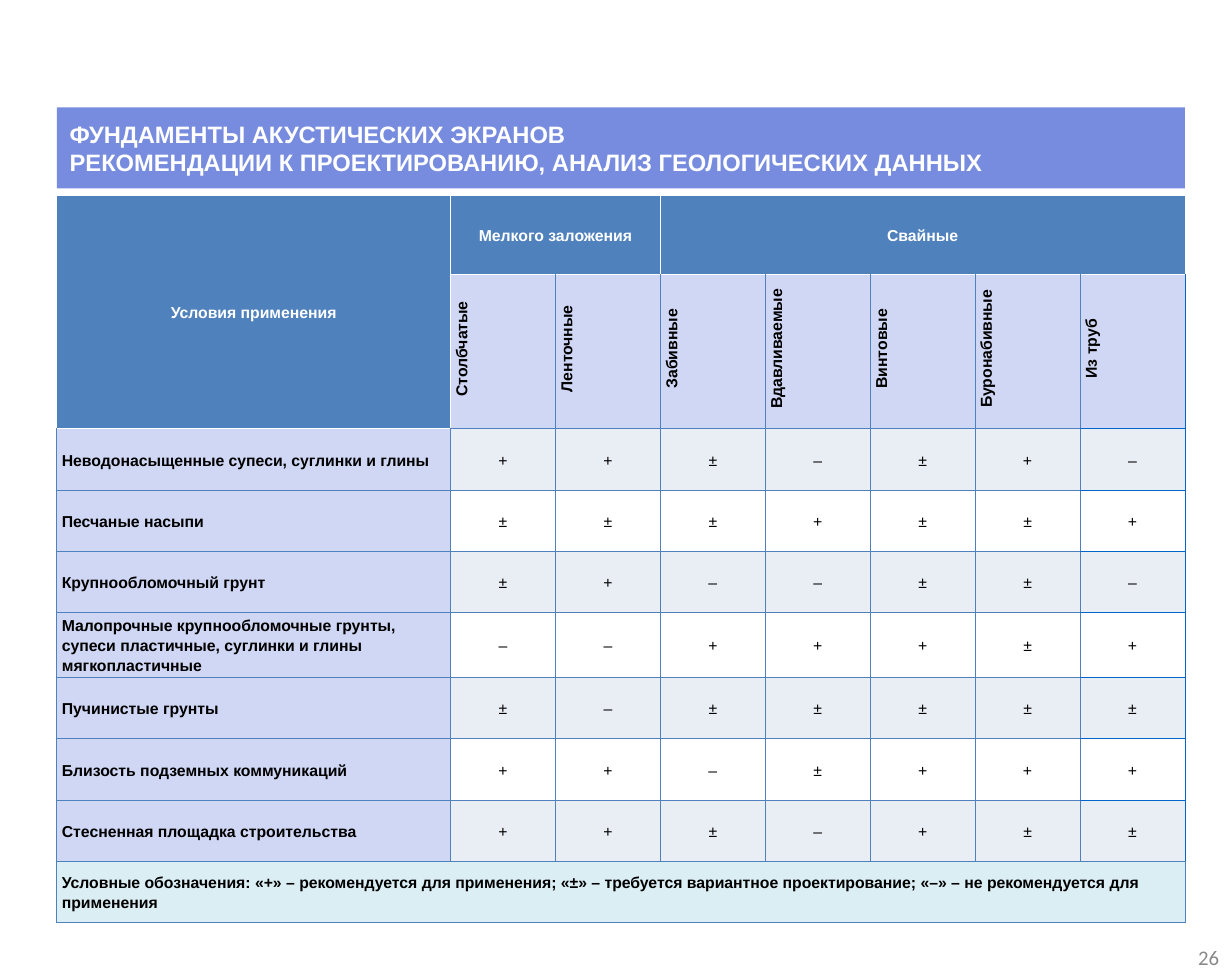
from dataclasses import dataclass

from lxml.etree import SubElement
from pptx import Presentation
from pptx.dml.color import RGBColor
from pptx.enum.shapes import MSO_SHAPE
from pptx.enum.text import MSO_ANCHOR, PP_ALIGN
from pptx.oxml.ns import qn
from pptx.util import Emu, Pt

PX = 4572  # 200 px to the inch


@dataclass(frozen=True)
class Theme:
    font: str = "Arial"
    number_font: str = "Calibri"
    title_size: int = 24
    table_size: int = 16
    number_size: int = 21
    white: str = "FFFFFF"
    black: str = "000000"
    gray: str = "898989"
    banner: str = "778CDF"
    header: str = "4F81BD"
    label: str = "D0D7F4"
    band: str = "E9EDF4"
    legend: str = "DBEEF4"
    grid: str = "4F81BD"
    edge: str = "0066CC"


TITLE = ("ФУНДАМЕНТЫ АКУСТИЧЕСКИХ ЭКРАНОВ",
         "РЕКОМЕНДАЦИИ К ПРОЕКТИРОВАНИЮ, АНАЛИЗ ГЕОЛОГИЧЕСКИХ ДАННЫХ")
FOUNDATIONS = ("Столбчатые", "Ленточные", "Забивные", "Вдавливаемые",
               "Винтовые", "Буронабивные", "Из труб")
CONDITIONS = (
    ("Неводонасыщенные супеси, суглинки и глины", "++±–±+–"),
    ("Песчаные насыпи", "±±±+±±+"),
    ("Крупнообломочный грунт", "±+––±±–"),
    ("Малопрочные крупнообломочные грунты, супеси пластичные, "
     "суглинки и глины мягкопластичные", "––+++±+"),
    ("Пучинистые грунты", "±–±±±±±"),
    ("Близость подземных коммуникаций", "++–±+++"),
    ("Стесненная площадка строительства", "++±–+±±"),
)
LEGEND = ("Условные обозначения: «+» – рекомендуется для применения; "
          "«±» – требуется вариантное проектирование; "
          "«–» – не рекомендуется для применения")
LAST_COLUMN = len(FOUNDATIONS)
LEGEND_ROW = len(CONDITIONS) + 2
COLUMN_WIDTHS = [1107] + [295] * LAST_COLUMN
ROW_HEIGHTS = [222, 434] + [172] * (LEGEND_ROW - 1)


class SlideBuilder:
    def __init__(self, slide, theme):
        self.slide = slide
        self.theme = theme

    def place(self, *lengths):
        return [Emu(length * PX) for length in lengths]

    def format_text(self, frame, size, color, bold=False, align=PP_ALIGN.LEFT, font=None):
        for para in frame.paragraphs:
            para.alignment = align
            for span in para.runs:
                span.font.name = font or self.theme.font
                span.font.size = Pt(size)
                span.font.bold = bold
                span.font.color.rgb = RGBColor.from_string(color)

    def set_margins(self, frame, side, top):
        frame.word_wrap = True
        frame.vertical_anchor = MSO_ANCHOR.MIDDLE
        frame.margin_left, frame.margin_right = self.place(side, side)
        frame.margin_top, frame.margin_bottom = self.place(top, top)

    def banner(self, lines, *bounds):
        box = self.slide.shapes.add_shape(MSO_SHAPE.RECTANGLE, *self.place(*bounds))
        box.shadow.inherit = False
        box.fill.solid()
        box.fill.fore_color.rgb = RGBColor.from_string(self.theme.banner)
        box.line.fill.background()
        box.text_frame.text = "\n".join(lines)
        self.set_margins(box.text_frame, 36, 0)
        self.format_text(box.text_frame, self.theme.title_size, self.theme.white, bold=True)

    def page_number(self, text, *bounds):
        box = self.slide.shapes.add_textbox(*self.place(*bounds))
        box.text_frame.text = text
        self.set_margins(box.text_frame, 36, 18)
        self.format_text(box.text_frame, self.theme.number_size, self.theme.gray,
                         align=PP_ALIGN.RIGHT, font=self.theme.number_font)

    def table(self, left, top, widths, heights):
        bounds = self.place(left, top, sum(widths), sum(heights))
        table = self.slide.shapes.add_table(len(heights), len(widths), *bounds).table
        table.first_row = table.horz_banding = False
        for column, width in zip(table.columns, self.place(*widths)):
            column.width = width
        for row, height in zip(table.rows, self.place(*heights)):
            row.height = height
        return table

    def cell(self, cell, fill, edges):
        """Give a cell its margins, borders (a colour for each side) and fill."""
        cell.vertical_anchor = MSO_ANCHOR.MIDDLE
        cell.margin_left, cell.margin_right = self.place(14, 14)
        cell.margin_top = cell.margin_bottom = 0
        properties = cell._tc.get_or_add_tcPr()
        for side, color in edges.items():
            line = SubElement(properties, qn(f"a:ln{side}"), w=str(Pt(1)))
            SubElement(SubElement(line, qn("a:solidFill")), qn("a:srgbClr"), val=color)
        cell.fill.solid()
        cell.fill.fore_color.rgb = RGBColor.from_string(fill)

    def cell_text(self, cell, text, color, bold=True, align=PP_ALIGN.CENTER):
        cell.text_frame.text = text
        para = cell.text_frame.paragraphs[0]
        para.line_spacing = 1.15
        para.space_after = Pt(10)
        self.format_text(cell.text_frame, self.theme.table_size, color, bold, align)

    def rotate_text(self, cell):
        cell._tc.get_or_add_tcPr().set("vert", "vert270")
        para = cell.text_frame.paragraphs[0]._p.get_or_add_pPr()
        para.set("marL", str(16 * PX))
        para.set("indent", "0")


def is_header(row, column):
    return row == 0 or (row == 1 and column == 0)


def cell_fill(theme, row, column):
    if is_header(row, column):
        return theme.header
    if row == LEGEND_ROW:
        return theme.legend
    if row == 1 or column == 0:
        return theme.label
    return theme.white if row % 2 else theme.band


def cell_edges(theme, row, column):
    if is_header(row, column):
        return dict.fromkeys("LRTB", theme.white)
    edges = dict.fromkeys("LRTB", theme.grid)
    if column == LAST_COLUMN and row < LEGEND_ROW:
        edges.update(R=theme.edge, T=theme.edge)
        if row < LEGEND_ROW - 1:
            edges["B"] = theme.edge
    if row == 1 or (row, column) == (2, 0):
        edges["T"] = theme.white
    if (row, column) == (1, 1):
        edges["L"] = theme.white
    return edges


def add_recommendations(builder):
    theme = builder.theme
    table = builder.table(160, 550, COLUMN_WIDTHS, ROW_HEIGHTS)
    for row in range(len(ROW_HEIGHTS)):
        for column in range(len(COLUMN_WIDTHS)):
            builder.cell(table.cell(row, column), cell_fill(theme, row, column),
                         cell_edges(theme, row, column))

    for text, first, last in (("Условия применения", (0, 0), (1, 0)),
                              ("Мелкого заложения", (0, 1), (0, 2)),
                              ("Свайные", (0, 3), (0, LAST_COLUMN))):
        table.cell(*first).merge(table.cell(*last))
        builder.cell_text(table.cell(*first), text, theme.white)

    for column, name in enumerate(FOUNDATIONS, 1):
        builder.cell_text(table.cell(1, column), name, theme.black)
        builder.rotate_text(table.cell(1, column))

    for row, (condition, marks) in enumerate(CONDITIONS, 2):
        builder.cell_text(table.cell(row, 0), condition, theme.black, align=PP_ALIGN.LEFT)
        for column, mark in enumerate(marks, 1):
            builder.cell_text(table.cell(row, column), mark, theme.black, bold=False)

    legend = table.cell(LEGEND_ROW, 0)
    legend.merge(table.cell(LEGEND_ROW, LAST_COLUMN))
    builder.cell_text(legend, LEGEND, theme.black, align=PP_ALIGN.LEFT)


def main():
    deck = Presentation()
    deck.slide_width, deck.slide_height = Emu(3464 * PX), Emu(2756 * PX)
    builder = SlideBuilder(deck.slides.add_slide(deck.slide_layouts[6]), Theme())
    builder.page_number("26", 2656, 2620, 808, 146)
    add_recommendations(builder)
    builder.banner(TITLE, 160, 302, 3172, 228)
    deck.save("out.pptx")


if __name__ == "__main__":
    main()
